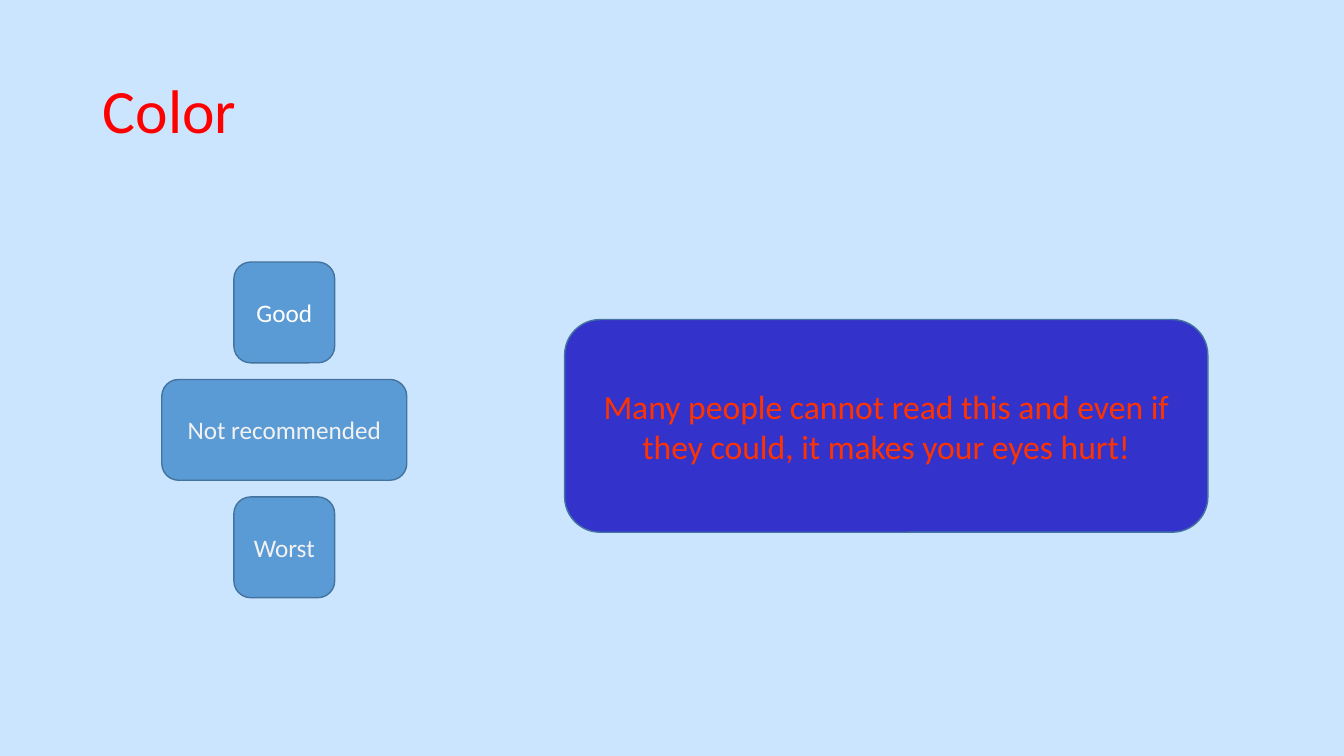
from pptx import Presentation
from pptx.dml.color import RGBColor
from pptx.enum.shapes import MSO_SHAPE
from pptx.enum.text import MSO_ANCHOR, PP_ALIGN
from pptx.util import Inches, Pt

COLORS = {
    "background": "CCE5FF",
    "title": "FF0000",
    "button": "5B9BD5",
    "outline": "43739E",
    "white": "FFFFFF",
    "off_white": "F2F2F2",
    "panel": "3333CC",
    "warning": "FF3300",
}


def color(name):
    return RGBColor.from_string(COLORS[name])


def write_text(shape, text, size, color_name, alignment):
    frame = shape.text_frame
    frame.text = text
    frame.word_wrap = True
    frame.vertical_anchor = MSO_ANCHOR.MIDDLE
    paragraph = frame.paragraphs[0]
    paragraph.alignment = alignment
    font = paragraph.runs[0].font
    for attribute, value in {"name": "Calibri", "size": Pt(size)}.items():
        setattr(font, attribute, value)
    font.color.rgb = color(color_name)


presentation = Presentation()
presentation.slide_width = Inches(13.33)
presentation.slide_height = Inches(7.5)
slide = presentation.slides.add_slide(presentation.slide_layouts[5])
background = slide.background.fill
background.solid()
background.fore_color.rgb = color("background")

title = slide.shapes.title
title.left, title.top = Inches(0.92), Inches(0.4)
title.width, title.height = Inches(11.5), Inches(1.45)
write_text(title, "Color", 44, "title", PP_ALIGN.LEFT)
title.text_frame.paragraphs[0].line_spacing = 0.9

# Rating buttons share a centre line and an even vertical step
BUTTON_CENTER, BUTTON_TOP, BUTTON_STEP = 2.82, 2.6, 1.165
ratings = [
    ("Good", 1, "white"),
    ("Not recommended", 2.43, "off_white"),
    ("Worst", 1, "off_white"),
]
boxes = [
    (BUTTON_CENTER - width / 2, BUTTON_TOP + row * BUTTON_STEP, width, 1,
     "button", text, 18, text_color)
    for row, (text, width, text_color) in enumerate(ratings)
]
boxes.append((
    5.6, 3.17, 6.38, 2.11, "panel",
    "Many people cannot read this and even if they could, it makes your eyes hurt!",
    24, "warning",
))

for left, top, width, height, fill, text, size, text_color in boxes:
    box = slide.shapes.add_shape(
        MSO_SHAPE.ROUNDED_RECTANGLE,
        Inches(left), Inches(top), Inches(width), Inches(height))
    box.shadow.inherit = False
    box.fill.solid()
    box.fill.fore_color.rgb = color(fill)
    box.line.color.rgb = color("outline")
    box.line.width = Pt(1)
    write_text(box, text, size, text_color, PP_ALIGN.CENTER)

presentation.save("out.pptx")
